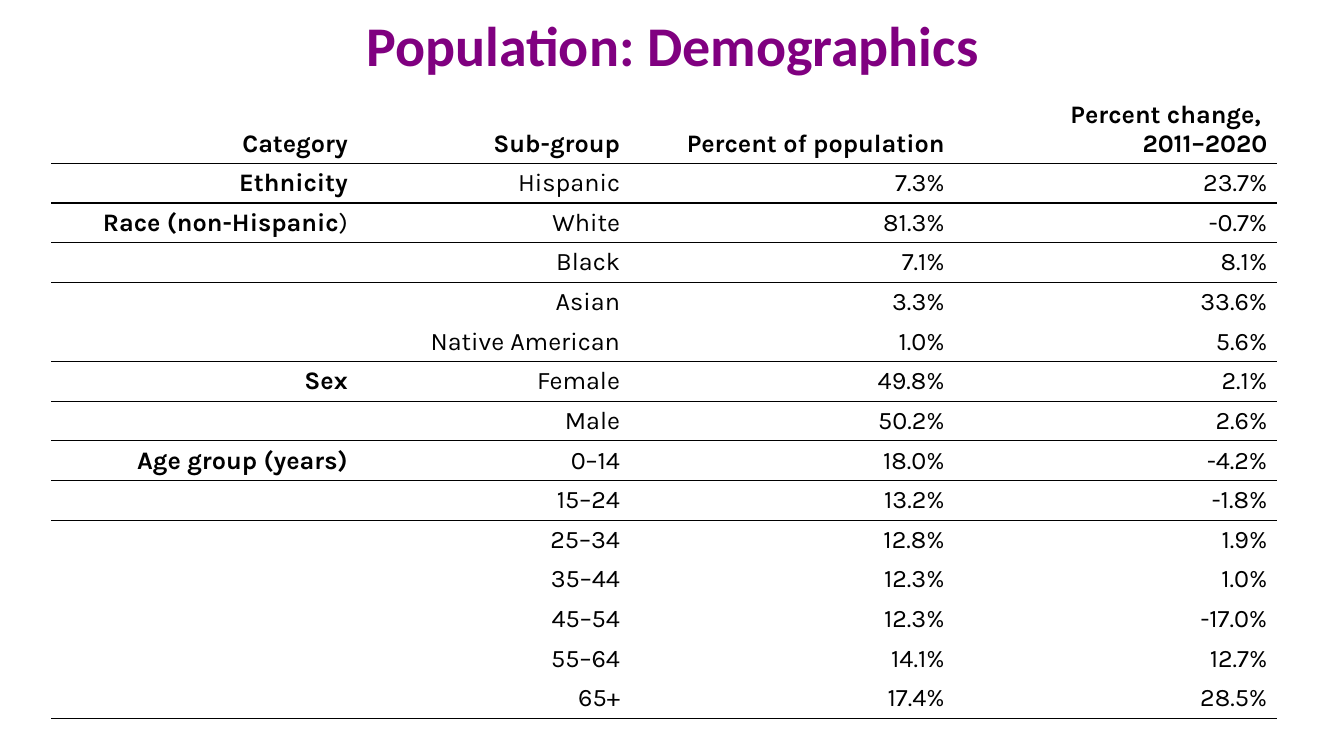
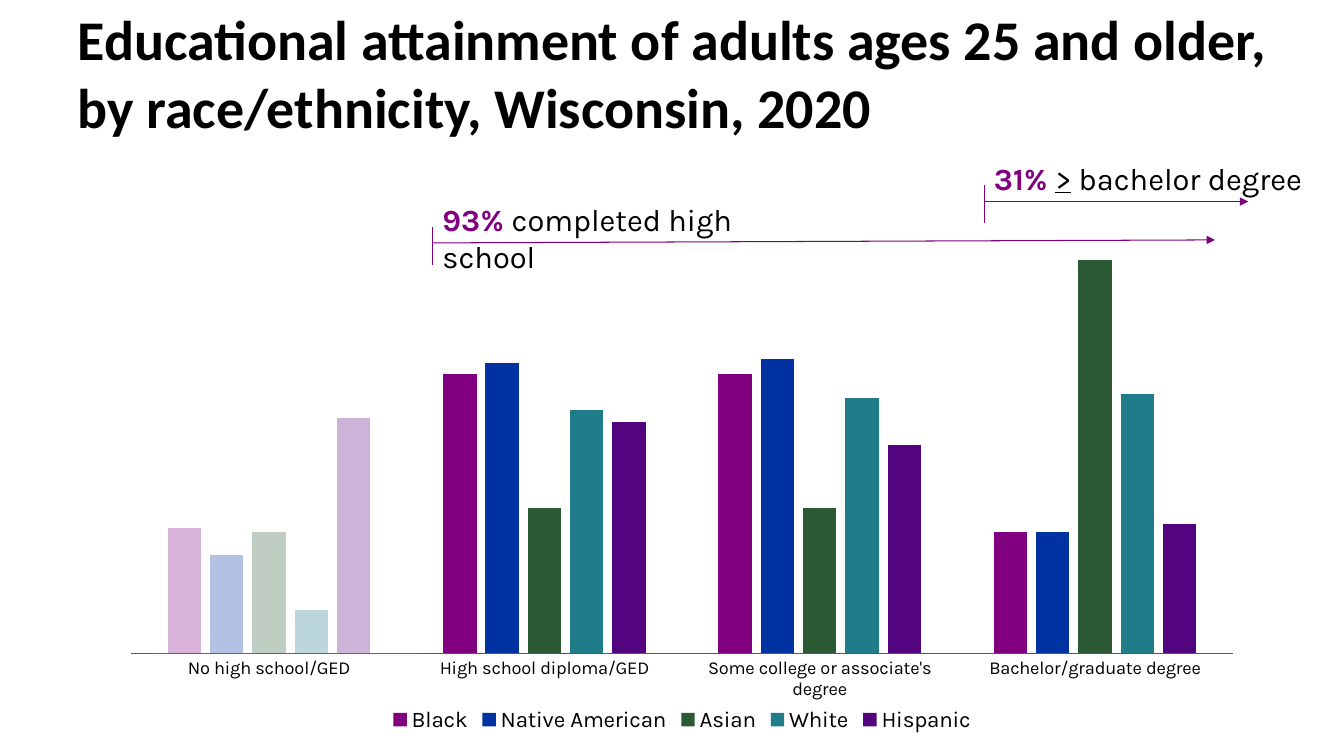
from lxml import etree
from pptx import Presentation
from pptx.chart.data import CategoryChartData
from pptx.dml.color import RGBColor
from pptx.enum.chart import XL_CHART_TYPE as ChartType, XL_LEGEND_POSITION as LegendPosition
from pptx.enum.chart import XL_TICK_MARK as TickMark
from pptx.enum.shapes import MSO_CONNECTOR as Connector, MSO_SHAPE as Shape
from pptx.enum.text import MSO_ANCHOR as Anchor, MSO_AUTO_SIZE as AutoSize, PP_ALIGN as Align
from pptx.oxml import parse_xml
from pptx.oxml.ns import nsdecls, qn
from pptx.util import Inches, Pt

BLACK = RGBColor(0x00, 0x00, 0x00)
WHITE = RGBColor(0xFF, 0xFF, 0xFF)
PURPLE = RGBColor(0x80, 0x00, 0x80)
LINE_PURPLE = RGBColor(0x7D, 0x00, 0x7D)
BLUE = RGBColor(0x00, 0x33, 0xA1)
GREEN = RGBColor(0x2A, 0x59, 0x34)
TEAL = RGBColor(0x20, 0x7C, 0x88)
VIOLET = RGBColor(0x52, 0x05, 0x7F)
AXIS_GRAY = RGBColor(0x4F, 0x5A, 0x65)

HEADING = {"name": "Calibri", "size": Pt(40), "bold": True}
TABLE_TEXT = {"name": "Karla", "size": Pt(18), "bold": False}
CALLOUT_TEXT = {"name": "Karla", "size": Pt(22), "bold": False}
BOLD = {"bold": True}
NO_STYLE = "{2D5ABB26-0587-4C30-8999-92F81FD0307C}"

# Table content: category, sub-group, share of population, change
HEADERS = ["Category", "Sub-group", "Percent of population", "Percent change, \n2011–2020"]
GROUPS = [
    ("Ethnicity", [("Hispanic", "7.3%", "23.7%")]),
    ("Race (non-Hispanic)", [
        ("White", "81.3%", "-0.7%"), ("Black", "7.1%", "8.1%"),
        ("Asian", "3.3%", "33.6%"), ("Native American", "1.0%", "5.6%")]),
    ("Sex", [("Female", "49.8%", "2.1%"), ("Male", "50.2%", "2.6%")]),
    ("Age group (years)", [
        ("0–14", "18.0%", "-4.2%"), ("15–24", "13.2%", "-1.8%"),
        ("25–34", "12.8%", "1.9%"), ("35–44", "12.3%", "1.0%"),
        ("45–54", "12.3%", "-17.0%"), ("55–64", "14.1%", "12.7%"),
        ("65+", "17.4%", "28.5%")]),
]

# Chart content
LEVELS = ["No high school/GED", "High school diploma/GED",
          "Some college or associate's degree", "Bachelor/graduate degree"]
ATTAINMENT = [
    ("Black", [32, 71, 71, 31], PURPLE),
    ("Native American", [25, 74, 75, 31], BLUE),
    ("Asian", [31, 37, 37, 100], GREEN),
    ("White", [11, 62, 65, 66], TEAL),
    ("Hispanic", [60, 59, 53, 33], VIOLET),
]


def set_font(font, **formats):
    font.color.rgb = formats.pop("color", BLACK)
    for name, value in formats.items():
        setattr(font, name, value)


def write(frame, paragraphs, style, align=Align.LEFT):
    """Fill a text frame; each paragraph is a list of (text, formats) spans."""
    for index, spans in enumerate(paragraphs):
        para = frame.add_paragraph() if index else frame.paragraphs[0]
        para.alignment = align
        for text, formats in spans:
            span = para.add_run()
            span.text = text
            set_font(span.font, **{**style, **formats})


class SlideBuilder:
    """Holds the deck, its shared style and the current slide."""

    def __init__(self):
        self.deck = Presentation()
        self.deck.slide_width, self.deck.slide_height = Inches(13.33), Inches(7.5)
        self.page = None

    def start(self, title, top, height, color, align):
        self.page = self.deck.slides.add_slide(self.deck.slide_layouts[5])
        box = self.page.shapes.title
        box.left, box.top, box.width, box.height = map(Inches, (0.67, top, 12, height))
        frame = box.text_frame
        frame.word_wrap, frame.auto_size = True, AutoSize.NONE
        frame.vertical_anchor = Anchor.MIDDLE
        write(frame, [[(title, {"color": color})]], HEADING, align)

    def rule(self, cell, side):
        cell._tc.get_or_add_tcPr().insert(0, parse_xml(
            f'<a:{side} {nsdecls("a")} w="12700"><a:solidFill>'
            f'<a:srgbClr val="{BLACK}"/></a:solidFill></a:{side}>'))

    def table(self, left, top, widths, header_height, height, rows, ruled):
        """rows hold cells of paragraphs; ruled lists rows with a line below."""
        frame = self.page.shapes.add_table(
            len(rows), len(widths), Inches(left), Inches(top),
            Inches(sum(widths)), Inches(height))
        table = frame.table
        table.first_row = table.horz_banding = False
        table._tbl.tblPr.find(qn("a:tableStyleId")).text = NO_STYLE
        for column, width in zip(table.columns, widths):
            column.width = Inches(width)
        row_height = (height - header_height) / (len(rows) - 1)
        for index, cells in enumerate(rows):
            table.rows[index].height = Inches(row_height if index else header_height)
            for column, paragraphs in enumerate(cells):
                cell = table.cell(index, column)
                cell.margin_top = cell.margin_bottom = Inches(0.04)
                cell.vertical_anchor = Anchor.MIDDLE if index else Anchor.BOTTOM
                cell.fill.background()
                write(cell.text_frame, paragraphs, TABLE_TEXT, Align.RIGHT)
                if index in ruled:
                    self.rule(cell, "lnB")
                if index - 1 in ruled:
                    self.rule(cell, "lnT")

    def column_chart(self, left, top, width, height, plot_area):
        data = CategoryChartData(number_format="0")
        data.categories = LEVELS
        for name, values, _ in ATTAINMENT:
            data.add_series(name, values)
        chart = self.page.shapes.add_chart(
            ChartType.COLUMN_CLUSTERED, *map(Inches, (left, top, width, height)), data).chart
        chart.has_title = False
        set_font(chart.font, name="Arial", size=Pt(10))

        # Axes
        axis = chart.category_axis
        axis.major_tick_mark = axis.minor_tick_mark = TickMark.NONE
        set_font(axis.tick_labels.font, name="Karla", size=Pt(13))
        axis.format.line.color.rgb, axis.format.line.width = AXIS_GRAY, Pt(0.75)
        scale = chart.value_axis
        scale.minimum_scale, scale.maximum_scale = 0, 102
        scale.has_major_gridlines = scale.visible = False

        # Legend
        chart.has_legend = True
        chart.legend.position = LegendPosition.BOTTOM
        chart.legend.include_in_layout = False
        set_font(chart.legend.font, name="Karla", size=Pt(16))

        # Columns
        plot = chart.plots[0]
        plot.gap_width, plot.overlap, plot.vary_by_categories = 219, -27, False
        for series, (_, _, color) in zip(plot.series, ATTAINMENT):
            series.format.fill.solid()
            series.format.fill.fore_color.rgb = color

        # Fixed inner plot area
        settings = [("layoutTarget", "inner"), ("xMode", "edge"), ("yMode", "edge")]
        settings += zip("xywh", plot_area)
        parts = "".join(f'<c:{name} val="{value}"/>' for name, value in settings)
        area = chart._chartSpace.chart.plotArea
        for old in area.findall(qn("c:layout")):
            area.remove(old)
        area.insert(0, parse_xml(f'<c:layout {nsdecls("c")}><c:manualLayout>{parts}'
                                 '</c:manualLayout></c:layout>'))

    def veil(self, left, top, width, height, opacity):
        box = self.page.shapes.add_shape(
            Shape.RECTANGLE, *map(Inches, (left, top, width, height)))
        box.shadow.inherit = False
        box.line.fill.background()
        box.fill.solid()
        box.fill.fore_color.rgb = WHITE
        color = box.fill._xPr.find(qn("a:solidFill"))[0]
        etree.SubElement(color, qn("a:alpha"), val=str(opacity * 1000))

    def line(self, shapes, start, end, arrow=False):
        line = shapes.add_connector(Connector.STRAIGHT, *map(Inches, (*start, *end)))
        line.line.color.rgb, line.line.width = LINE_PURPLE, Pt(0.75)
        if arrow:
            etree.SubElement(line.line._get_or_add_ln(), qn("a:tailEnd"), type="triangle")
        etree.SubElement(line._element.spPr, qn("a:effectLst"))

    def callout(self, left, top, width, spans, arrow_start, arrow_end, tick):
        """Text over an arrow that starts at a short upright tick."""
        shapes = self.page.shapes.add_group_shape().shapes
        box = shapes.add_textbox(*map(Inches, (left, top, width, 0.47)))
        box.text_frame.word_wrap = True
        write(box.text_frame, [spans], CALLOUT_TEXT)
        self.line(shapes, (left, arrow_start), arrow_end, arrow=True)
        self.line(shapes, (left, tick[0]), (left, tick[1]))


def category_spans(name):
    """Bold category name; a closing bracket after the race group stays light."""
    if name == "Race (non-Hispanic)":
        return [(name[:-1], BOLD), (name[-1], {})]
    return [(name, BOLD)] if name else []


def table_rows():
    rows = [[[[(line, BOLD)] for line in header.split("\n")] for header in HEADERS]]
    for category, members in GROUPS:
        for index, values in enumerate(members):
            label = category_spans("" if index else category)
            rows.append([[label]] + [[[(value, {})]] for value in values])
    return rows


def ruled_rows():
    """Lines run below the header and the first and last row of each group."""
    ruled, last = {0}, 0
    for _, members in GROUPS:
        ruled |= {last + 1, last + len(members)}
        last += len(members)
    return ruled


def main():
    builder = SlideBuilder()

    # Demographics table
    builder.start("Population: Demographics", 0, 0.88, PURPLE, Align.CENTER)
    builder.table(0.51, 0.94, [3.04, 2.7, 3.22, 3.2], 0.68, 6.19, table_rows(), ruled_rows())

    # Educational attainment chart
    builder.start("Educational attainment of adults ages 25 and older, "
                  "by race/ethnicity, Wisconsin, 2020", -0.12, 1.67, BLACK, Align.LEFT)
    builder.column_chart(0.98, 2.3, 11.57, 5.01, (0.028, 0.041, 0.944, 0.794))
    builder.veil(1.53, 3.7, 2.63, 2.78, 70)
    figure = {"bold": True, "color": PURPLE}
    builder.callout(4.29, 1.94, 3.78, [("93% ", figure), ("completed high school", {})],
                    2.41, (12.05, 2.38), (2.25, 2.63))
    builder.callout(9.76, 1.54, 3.34,
                    [("31% ", figure), (">", {"underline": True}), (" bachelor degree", {})],
                    2, (12.38, 2), (1.84, 2.21))
    builder.deck.save("out.pptx")


if __name__ == "__main__":
    main()
